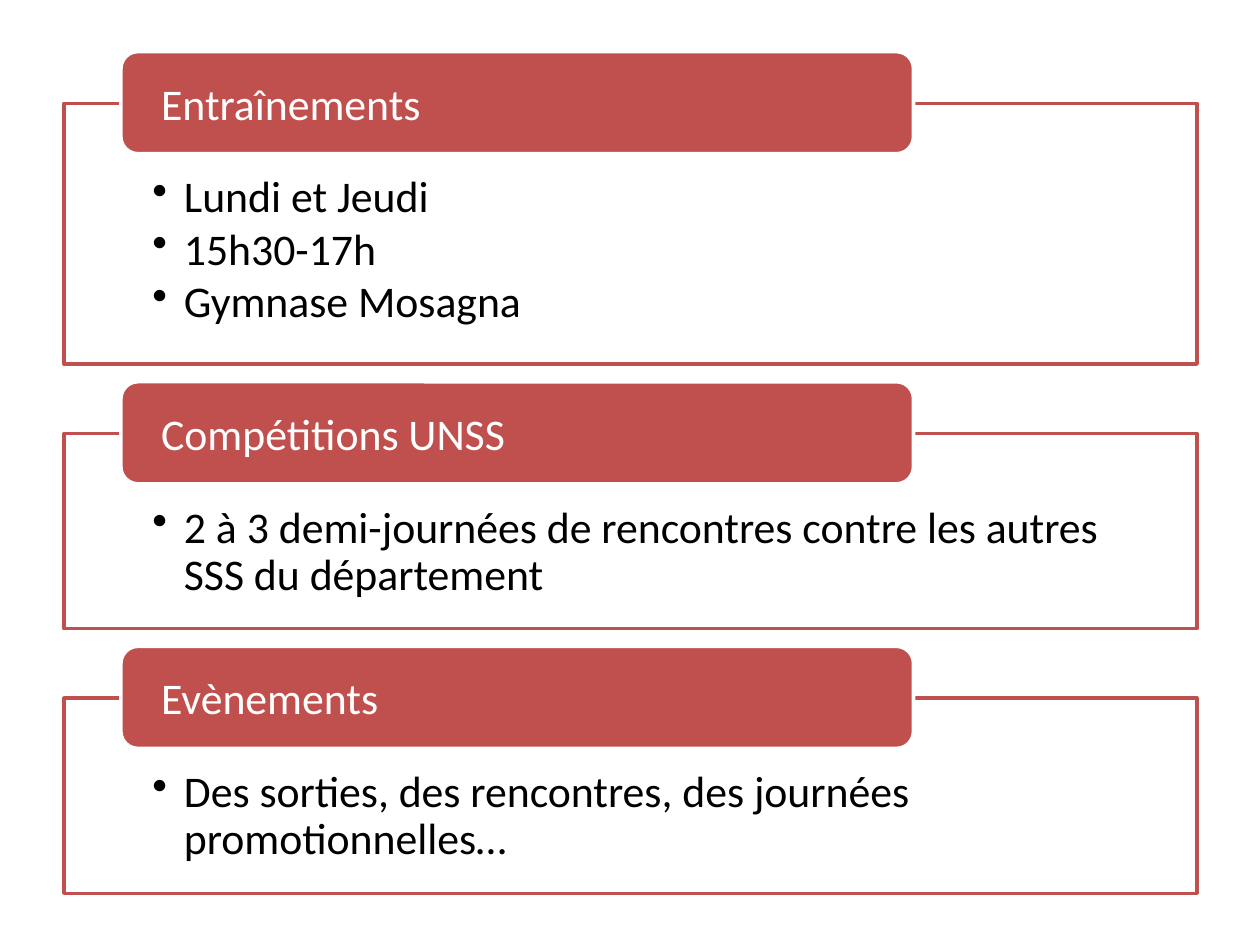
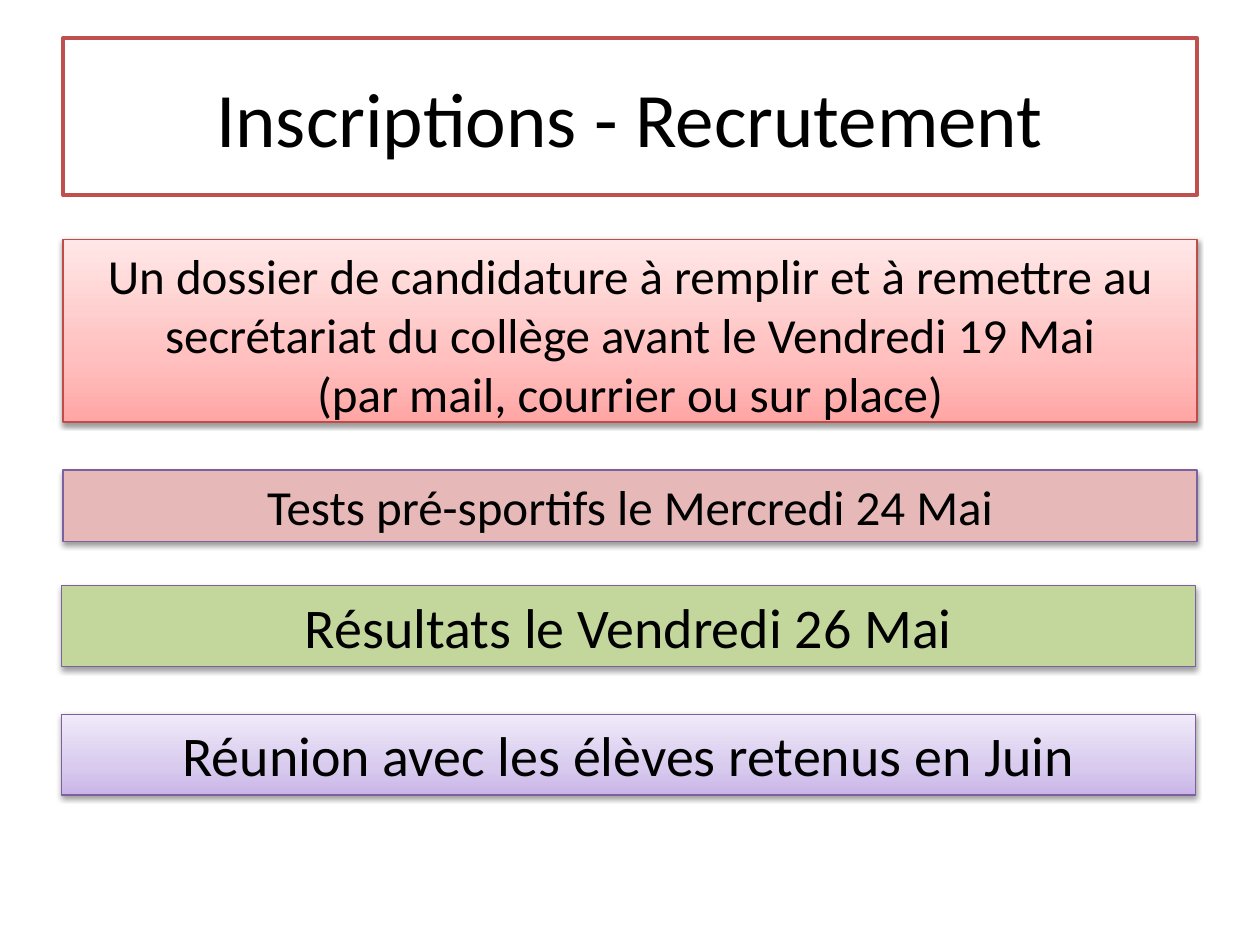
"""Build two slides: the section's activities, then its enrolment steps."""
from lxml import etree
from pptx import Presentation, util as u
from pptx.dml.color import RGBColor
from pptx.enum import shapes, text
from pptx.oxml import parse_xml
from pptx.oxml.ns import nsdecls, qn

FONT = "Calibri"
RED, WHITE, BLACK, PURPLE = "C0504D", "FFFFFF", "000000", "7D60A0"
PINK_FADE = ("FFA6A5", "FFC0BF", "FFE7E7")
PURPLE_FADE = ("C9B5E8", "D8CBEE", "F0EAF9")
FADE_STOPS = (0, 35, 100)

deck = Presentation()
deck.slide_width, deck.slide_height = u.Inches(10), u.Inches(7.5)
COLUMN, ROW = deck.slide_width / 100, deck.slide_height / 75


def style(box, place, fill, line, width, shadow=False):
    """Place a box on the grid and set its fill, outline and shadow."""
    left, top, wide, high = place
    box.left, box.width = round(left * COLUMN), round(wide * COLUMN)
    box.top, box.height = round(top * ROW), round(high * ROW)
    box.line.color.rgb = RGBColor.from_string(line)
    box.line.width = u.Pt(width)
    box.shadow.inherit = False
    properties = box._element.spPr
    if isinstance(fill, tuple):
        box.fill.gradient()
        box.fill.gradient_angle = 90
        stops = properties.find(qn("a:gradFill")).find(qn("a:gsLst"))
        stops.clear()
        for position, shade in zip(FADE_STOPS, fill):
            stop = etree.SubElement(stops, qn("a:gs"), pos=str(position * 1000))
            etree.SubElement(stop, qn("a:srgbClr"), val=shade)
    else:
        box.fill.solid()
        box.fill.fore_color.rgb = RGBColor.from_string(fill)
    if shadow:
        properties.find(qn("a:effectLst")).append(parse_xml(
            f'<a:outerShdw {nsdecls("a")} blurRad="40000" dist="20000" dir="5400000" rotWithShape="0">'
            '<a:srgbClr val="000000"><a:alpha val="38000"/></a:srgbClr></a:outerShdw>'))


def write(box, wording, size, colour, align, bullet=False):
    """Fill a box with paragraphs, bulleted or plain."""
    frame = box.text_frame
    frame.text = wording
    frame.word_wrap = True
    for para in frame.paragraphs:
        para.alignment = align
        para.space_before = u.Pt(0)
        settings = para._p.get_or_add_pPr()
        indent = u.Inches(0.25) if bullet else 0
        settings.set("marL", str(indent))
        settings.set("indent", str(-indent))
        if bullet:
            para.line_spacing = 0.9
            para.space_after = u.Pt(3)
            etree.SubElement(settings, qn("a:buChar"), char="•")
        else:
            etree.SubElement(settings, qn("a:buNone"))
        for span in para.runs:
            span.font.name = FONT
            span.font.size = u.Pt(size)
            span.font.color.rgb = RGBColor.from_string(colour)


activities = [
    ("Entraînements", "Lundi et Jeudi\n15h30-17h\nGymnase Mosagna", 20.7),
    ("Compétitions UNSS", "2 à 3 demi-journées de rencontres contre les autres SSS du département", 15.5),
    ("Evènements", "Des sorties, des rencontres, des journées promotionnelles…", 15.5),
]
page = deck.slides.add_slide(deck.slide_layouts[6])
top, gap = 8.2, 5.5
for heading, details, height in activities:
    panel = page.shapes.add_shape(shapes.MSO_SHAPE.RECTANGLE, 0, 0, 0, 0)
    style(panel, (5.1, top, 89.9, height), WHITE, RED, 2)
    write(panel, details, 25, BLACK, text.PP_ALIGN.LEFT, bullet=True)
    frame = panel.text_frame
    frame.vertical_anchor = text.MSO_ANCHOR.TOP
    frame.margin_left = frame.margin_right = round(7 * COLUMN)
    frame.margin_top, frame.margin_bottom = round(5.7 * ROW), round(1.9 * ROW)

    tab = page.shapes.add_shape(shapes.MSO_SHAPE.ROUNDED_RECTANGLE, 0, 0, 0, 0)
    style(tab, (9.6, top - 4.1, 62.9, 8.1), RED, WHITE, 2)
    write(tab, heading, 25, WHITE, text.PP_ALIGN.LEFT)
    tab.text_frame.vertical_anchor = text.MSO_ANCHOR.MIDDLE
    tab.text_frame.margin_left = tab.text_frame.margin_right = round(2.8 * COLUMN)
    top += height + gap

page = deck.slides.add_slide(deck.slide_layouts[1])
title, dossier = page.placeholders
style(title, (5, 3, 90, 12.5), WHITE, RED, 2)
write(title, "Inscriptions - Recrutement", 44, BLACK, text.PP_ALIGN.CENTER)
title.text_frame.vertical_anchor = text.MSO_ANCHOR.MIDDLE

style(dossier, (5, 19, 90, 14.5), PINK_FADE, "BF4C48", 0.75, shadow=True)
write(dossier, "Un dossier de candidature à remplir et à remettre au secrétariat du collège "
      "avant le Vendredi 19 Mai\n(par mail, courrier ou sur place)", 28, BLACK, text.PP_ALIGN.CENTER)
dossier.text_frame.auto_size = text.MSO_AUTO_SIZE.NONE

steps = [
    ("Tests pré-sportifs le Mercredi 24 Mai", 28, (5, 37.3, 90, 5.7), "E6B9B8"),
    ("Résultats le Vendredi 26 Mai", 32, (4.9, 46.5, 90, 6.4), "C3D69B"),
    ("Réunion avec les élèves retenus en Juin", 32, (4.9, 56.7, 90, 6.4), PURPLE_FADE),
]
for wording, size, place, fill in steps:
    band = page.shapes.add_shape(shapes.MSO_SHAPE.RECTANGLE, 0, 0, 0, 0)
    style(band, place, fill, PURPLE, 0.75, shadow=True)
    write(band, wording, size, BLACK, text.PP_ALIGN.CENTER)
    band.text_frame.vertical_anchor = text.MSO_ANCHOR.TOP
    band.text_frame.auto_size = text.MSO_AUTO_SIZE.SHAPE_TO_FIT_TEXT

deck.save("out.pptx")
